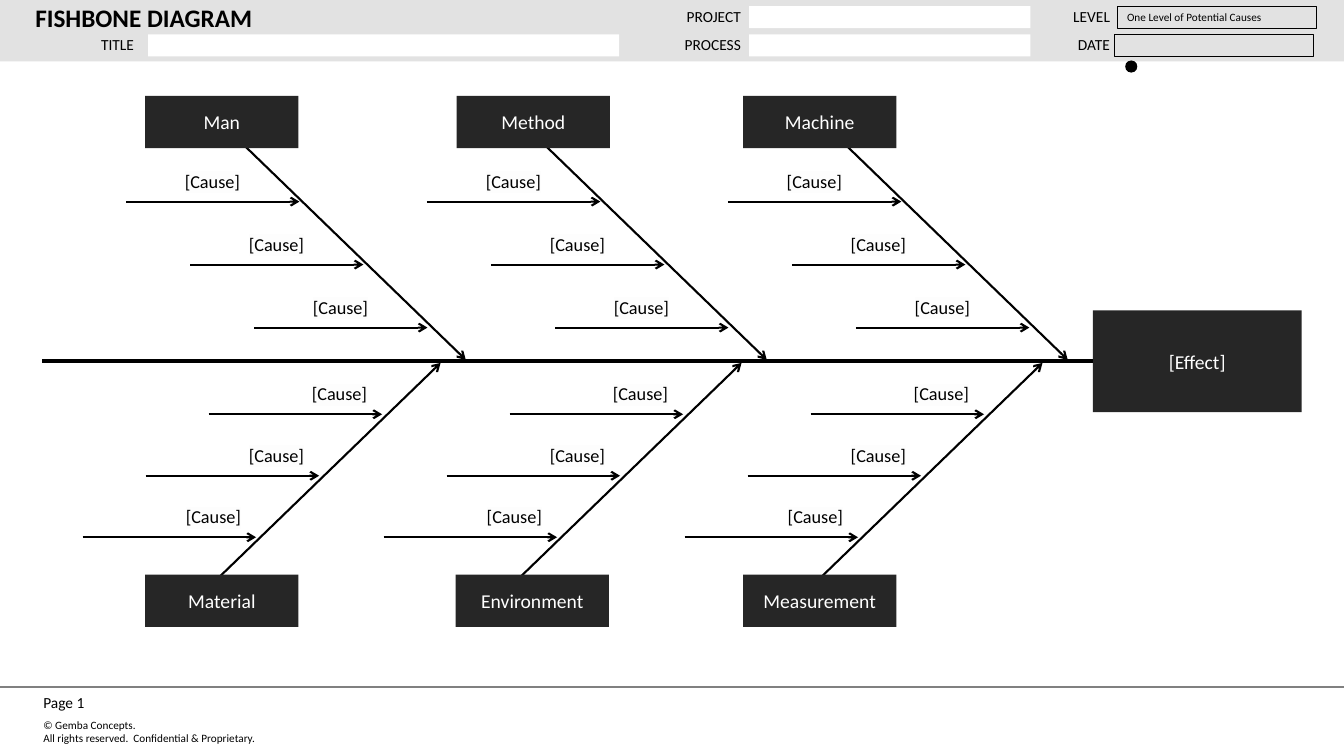
from dataclasses import dataclass

from lxml.etree import SubElement
from pptx import Presentation
from pptx.dml.color import RGBColor as RGB
from pptx.enum.shapes import MSO_CONNECTOR as CONN, MSO_SHAPE as SHAPE
from pptx.enum.text import MSO_ANCHOR as ANCHOR, MSO_AUTO_SIZE as AUTO, PP_ALIGN as ALIGN
from pptx.oxml.ns import qn
from pptx.util import Inches, Pt


@dataclass(frozen=True)
class Theme:
    font: str = "Calibri"
    black: RGB = RGB(0x00, 0x00, 0x00)
    white: RGB = RGB(0xFF, 0xFF, 0xFF)
    band: RGB = RGB(0xE2, 0xE2, 0xE2)
    box: RGB = RGB(0x26, 0x26, 0x26)
    rule: RGB = RGB(0x80, 0x80, 0x80)
    highlight: str = "FDFDFD"
    title: int = 18
    category: int = 14
    cause: int = 13
    label: int = 11
    small: int = 8
    thin: float = 0.75
    bone: float = 1.5
    spine: float = 3


T = Theme()

# Content: lengths in inches
TITLE = "FISHBONE DIAGRAM"
FIELD_LABELS = [  # text, left, top, width
    ("DATE", 10.24, 0.33, 0.81),
    ("PROCESS", 6.25, 0.33, 1.14),
    ("LEVEL", 10.24, 0.05, 0.81),
    ("PROJECT", 6.25, 0.05, 1.14),
    ("TITLE", 0.15, 0.33, 1.22),
]
WHITE_FIELDS = [(1.47, 0.34, 4.67), (7.43, 0.34, 2.79), (7.43, 0.06, 2.79)]
OUTLINED_FIELDS = [
    ("", 11.05, 0.34),
    ("One Level of Potential Causes", 11.08, 0.06),
]
EFFECT = "[Effect]"
UPPER = [("Man", 1.44), ("Method", 4.53), ("Machine", 7.37)]  # name, box left
LOWER = [("Material", 1.44), ("Environment", 4.52), ("Measurement", 7.37)]
CAUSES = ["[Cause]"] * 3
PAGE = "Page 1"
COPYRIGHT = "© Gemba Concepts.\nAll rights reserved.  Confidential & Proprietary."

# Each side of the spine; cause offsets run back from the tip of the bone
UPPER_SIDE = dict(box_top=0.95, first_tip=4.62, tip_y=3.57, tail_y=1.45,
                  first_dx=-1.65, dx=0.635, first_y=2.0, dy=0.625, label_gap=0.56)
LOWER_SIDE = dict(box_top=5.7, first_tip=4.37, tip_y=3.6, tail_y=5.72,
                  first_dx=-0.58, dx=-0.625, first_y=4.11, dy=0.61, label_gap=0.12)
TIP_STEP, BONE_RUN = 2.985, 2.19
CAUSE_ARROW, CAUSE_W, CAUSE_H = 1.72, 1.84, 0.43
SPINE_Y = 3.58


def write(sp, text, size, color=T.black, align=ALIGN.LEFT, margin=0.04,
          bold=False, highlight=None):
    tf = sp.text_frame
    tf.auto_size = AUTO.NONE
    tf.word_wrap = True
    tf.vertical_anchor = ANCHOR.MIDDLE
    tf.margin_left = tf.margin_right = Inches(margin)
    tf.margin_top = tf.margin_bottom = Inches(min(margin, 0.05))
    tf.text = text
    for p in tf.paragraphs:
        p.alignment = align
        p.space_before = Pt(0)
        for r in p.runs:
            r.font.size, r.font.bold, r.font.name = Pt(size), bold, T.font
            r.font.color.rgb = color
            if highlight:
                fill = r.font._element.find(qn("a:solidFill"))
                mark = SubElement(r.font._element, qn("a:highlight"))
                SubElement(mark, qn("a:srgbClr"), val=highlight)
                fill.addnext(mark)


def add_box(slide, x, y, w, h, fill=None, line=None, shape=SHAPE.RECTANGLE):
    sp = slide.shapes.add_shape(shape, Inches(x), Inches(y), Inches(w), Inches(h))
    sp.shadow.inherit = False
    if fill is None:
        sp.fill.background()
    else:
        sp.fill.solid()
        sp.fill.fore_color.rgb = fill
    if line is None:
        sp.line.fill.background()
    else:
        sp.line.color.rgb = line
        sp.line.width = Pt(T.thin)
    return sp


def add_text(slide, text, x, y, w, h, size, **style):
    tb = slide.shapes.add_textbox(Inches(x), Inches(y), Inches(w), Inches(h))
    write(tb, text, size, **style)


def add_line(slide, x1, y1, x2, y2, width=T.bone, color=T.black, arrow=False):
    cx = slide.shapes.add_connector(
        CONN.STRAIGHT, Inches(x1), Inches(y1), Inches(x2), Inches(y2))
    cx.line.color.rgb = color
    cx.line.width = Pt(width)
    if arrow:
        SubElement(cx.line._get_or_add_ln(), qn("a:tailEnd"), type="arrow")
    SubElement(cx._element.spPr, qn("a:effectLst"))
    return cx


def add_category(slide, name, box_x, index, side):
    """Draw one bone with its category box and its causes."""
    tip = side["first_tip"] + index * TIP_STEP
    add_line(slide, tip - BONE_RUN, side["tail_y"], tip, side["tip_y"], arrow=True)
    box = add_box(slide, box_x, side["box_top"], 1.52, 0.52, T.box)
    write(box, name, T.category, T.white, ALIGN.CENTER, 0.1)
    for i, cause in enumerate(CAUSES):
        end = tip + side["first_dx"] + i * side["dx"]
        y = side["first_y"] + i * side["dy"]
        add_text(slide, cause, end - side["label_gap"] - CAUSE_W, y - 0.42,
                 CAUSE_W, CAUSE_H, T.cause, align=ALIGN.RIGHT, margin=0.03,
                 highlight=T.highlight)
        add_line(slide, end - CAUSE_ARROW, y, end, y, arrow=True)


def add_header(slide):
    band = add_box(slide, 0, 0, 13.33, 0.61, T.band)
    title = slide.shapes.title
    title._element.addprevious(band._element)
    title.left, title.top = Inches(0.31), Inches(0)
    title.width, title.height = Inches(5.79), Inches(0.34)
    write(title, TITLE, T.title, bold=True)
    for text, x, y, w in FIELD_LABELS:
        add_text(slide, text, x, y, w, 0.23, T.label, align=ALIGN.RIGHT)
    for x, y, w in WHITE_FIELDS:
        add_box(slide, x, y, w, 0.22, T.white)
    for text, x, y in OUTLINED_FIELDS:
        field = add_box(slide, x, y, 1.98, 0.22, line=T.black)
        if text:
            write(field, text, T.small, margin=0.1)
    add_box(slide, 11.16, 0.6, 0.12, 0.12, T.black, shape=SHAPE.OVAL)


def add_fishbone(slide):
    effect = add_box(slide, 10.84, 3.08, 2.07, 1.01, T.box)
    write(effect, EFFECT, T.category, T.white, ALIGN.CENTER, 0.1)
    spine = add_line(slide, 10.84, SPINE_Y, 0.42, SPINE_Y, T.spine)
    spine.begin_connect(effect, 1)
    spine.end_y = spine.begin_y
    for categories, side in ((LOWER, LOWER_SIDE), (UPPER, UPPER_SIDE)):
        for index, (name, box_x) in enumerate(categories):
            add_category(slide, name, box_x, index, side)


def add_footer(slide):
    add_line(slide, 0, 6.82, 13.33, 6.82, color=T.rule)
    add_text(slide, COPYRIGHT, 0.37, 7.06, 4.31, 0.39, T.small, margin=0.06)
    add_text(slide, PAGE, 0.37, 6.82, 0.94, 0.3, T.label, margin=0.06)


def main():
    prs = Presentation()
    prs.slide_width, prs.slide_height = Inches(13.33), Inches(7.5)
    slide = prs.slides.add_slide(prs.slide_layouts[5])
    add_header(slide)
    add_fishbone(slide)
    add_footer(slide)
    prs.save("out.pptx")


if __name__ == "__main__":
    main()
